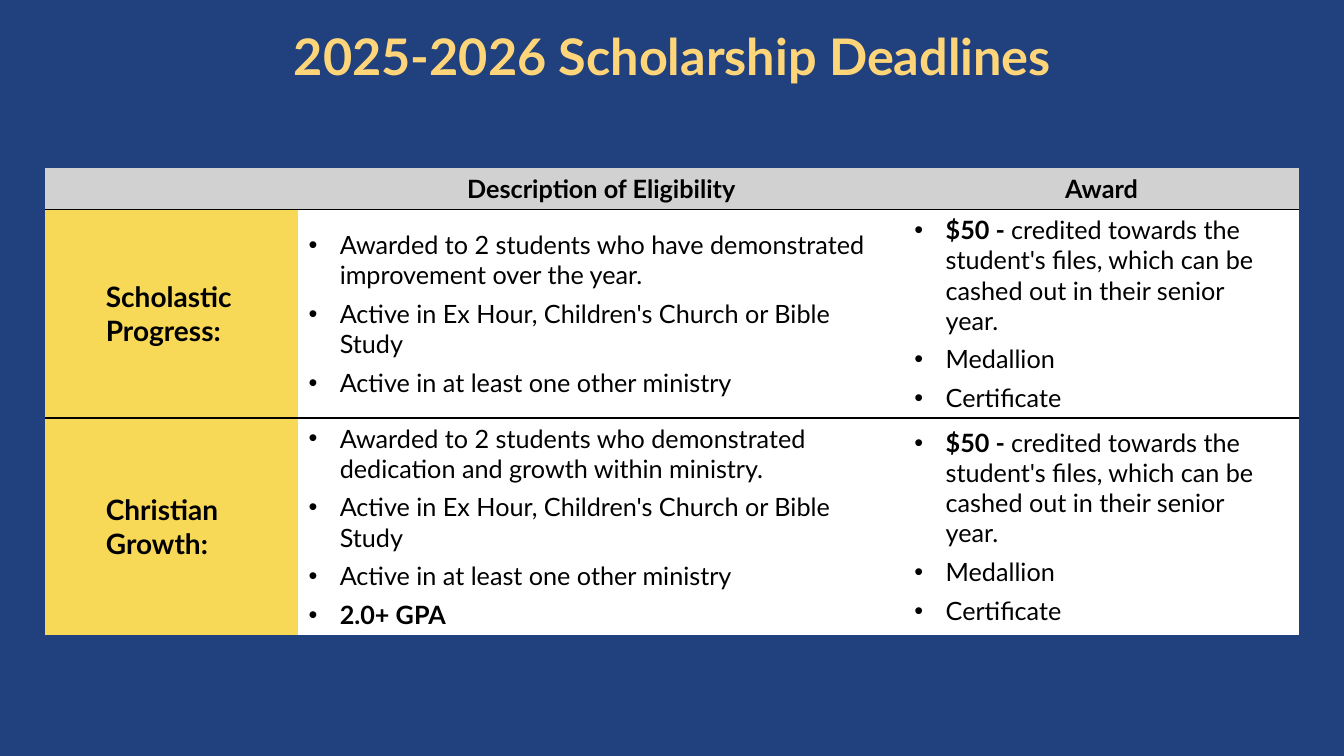
import pptx
import pptx.util
import pptx.dml.color
import pptx.enum.text
import pptx.oxml
import pptx.oxml.ns
from pptx.util import Inches

NS = pptx.oxml.ns.nsdecls("a")
ALIGN = pptx.enum.text.PP_ALIGN
MIDDLE = pptx.enum.text.MSO_ANCHOR.MIDDLE
BODY = {"size": 18, "bold": False, "color": "000000"}
HEAD = {**BODY, "bold": True}
NAME = {**HEAD, "size": 20}


def rgb(value):
    return pptx.dml.color.RGBColor.from_string(value)


class Deck:
    font = "Lato"
    navy, gold, yellow, grey, white = "20407E", "FFD579", "F7D857", "D1D1D1", "FFFFFF"

    def __init__(self):
        self.prs = pptx.Presentation()
        self.prs.slide_width, self.prs.slide_height = Inches(13.33), Inches(7.5)
        self.s = self.prs.slides.add_slide(self.prs.slide_layouts[6])
        self.fill(self.s.background.fill, self.navy)

    def fill(self, fill, color):
        fill.solid()
        fill.fore_color.rgb = rgb(color)

    def run(self, p, text, style):
        r = p.add_run()
        r.text = text
        values = {"name": self.font, "size": pptx.util.Pt(style["size"]), "bold": style["bold"]}
        for key, value in values.items():
            setattr(r.font, key, value)
        r.font.color.rgb = rgb(style["color"])

    def lines(self, p, text, style):
        for i, line in enumerate(text.split("\n")):
            if i:
                p.add_line_break()
            self.run(p, line, style)

    def title(self, text):
        sp = self.s.shapes.add_textbox(Inches(0.92), Inches(0.34), Inches(11.5), Inches(0.5))
        tf = sp.text_frame
        for key, value in {"word_wrap": True, "vertical_anchor": MIDDLE}.items():
            setattr(tf, key, value)
        p = tf.paragraphs[0]
        p.alignment, p.line_spacing = ALIGN.CENTER, 0.9
        self.run(p, text, {"size": 36, "bold": True, "color": self.gold})

    def indent(self, p, left, first):
        p.level = 1
        pPr = p._p.get_or_add_pPr()
        pPr.set("marL", str(Inches(left)))
        pPr.set("indent", str(Inches(first)))
        return pPr

    def bullets(self, cell, items):
        tf = cell.text_frame
        for i, item in enumerate(items):
            p = tf.add_paragraph() if i else tf.paragraphs[0]
            p.space_after = pptx.util.Pt(6)
            pPr = self.indent(p, 0.31, -0.31)
            pPr.append(pptx.oxml.parse_xml(f'<a:buFont {NS} typeface="Arial"/>'))
            pPr.append(pptx.oxml.parse_xml(f'<a:buChar {NS} char="•"/>'))
            for text, style in item:
                self.run(p, text, style)

    def cell(self, cell, color, ruled):
        cell.vertical_anchor = MIDDLE
        self.fill(cell.fill, color)
        tcPr = cell._tc.get_or_add_tcPr()
        for i, side in enumerate("LRTB"):
            paint = '<a:solidFill><a:srgbClr val="000000"/></a:solidFill>' if side in ruled else "<a:noFill/>"
            tcPr.insert(i, pptx.oxml.parse_xml(f'<a:ln{side} {NS} w="12700">{paint}</a:ln{side}>'))

    def table(self, headings, rows):
        widths, heights = (2.51, 6.01, 3.91), (0.41, 1.78, 1.78)
        frame = self.s.shapes.add_table(
            len(heights), len(widths), Inches(0.45), Inches(1.67), Inches(sum(widths)), Inches(sum(heights)))
        t = frame.table
        t.horz_banding = False
        for column, width in zip(t.columns, widths):
            column.width = Inches(width)
        for row, height in zip(t.rows, heights):
            row.height = Inches(height)
        for c, heading in enumerate(headings):
            self.cell(t.cell(0, c), self.grey, "B")
            p = t.cell(0, c).text_frame.paragraphs[0]
            p.alignment = ALIGN.CENTER
            if heading:
                self.run(p, heading, HEAD)
        for r, (name, *lists) in enumerate(rows, 1):
            ruled = "T" if r == len(rows) else "TB"
            self.cell(t.cell(r, 0), self.yellow, ruled)
            p = t.cell(r, 0).text_frame.paragraphs[0]
            self.indent(p, 0.5, 0)
            self.lines(p, name, NAME)
            for c, items in enumerate(lists, 1):
                self.cell(t.cell(r, c), self.white, ruled)
                self.bullets(t.cell(r, c), items)
            t.cell(r, len(lists)).margin_right = Inches(0.25)


def main():
    activity = [
        [("Active in Ex Hour, Children's Church or Bible Study", BODY)],
        [("Active in at least one other ministry", BODY)],
    ]
    award = [
        [("$50 - ", HEAD),
         ("credited towards the student's files, which can be cashed out in their senior year.", BODY)],
        [("Medallion", BODY)],
        [("Certificate", BODY)],
    ]
    progress = [("Awarded to 2 students who have demonstrated improvement over the year.", BODY)]
    growth = [("Awarded to 2 students who demonstrated dedication and growth within ministry.", BODY)]
    deck = Deck()
    deck.title("2025-2026 Scholarship Deadlines")
    deck.table(("", "Description of Eligibility", "Award"), [
        ("Scholastic Progress:", [progress, *activity], award),
        ("Christian\nGrowth:", [growth, *activity, [("2.0+ GPA", HEAD)]], award),
    ])
    deck.prs.save("out.pptx")


if __name__ == "__main__":
    main()
